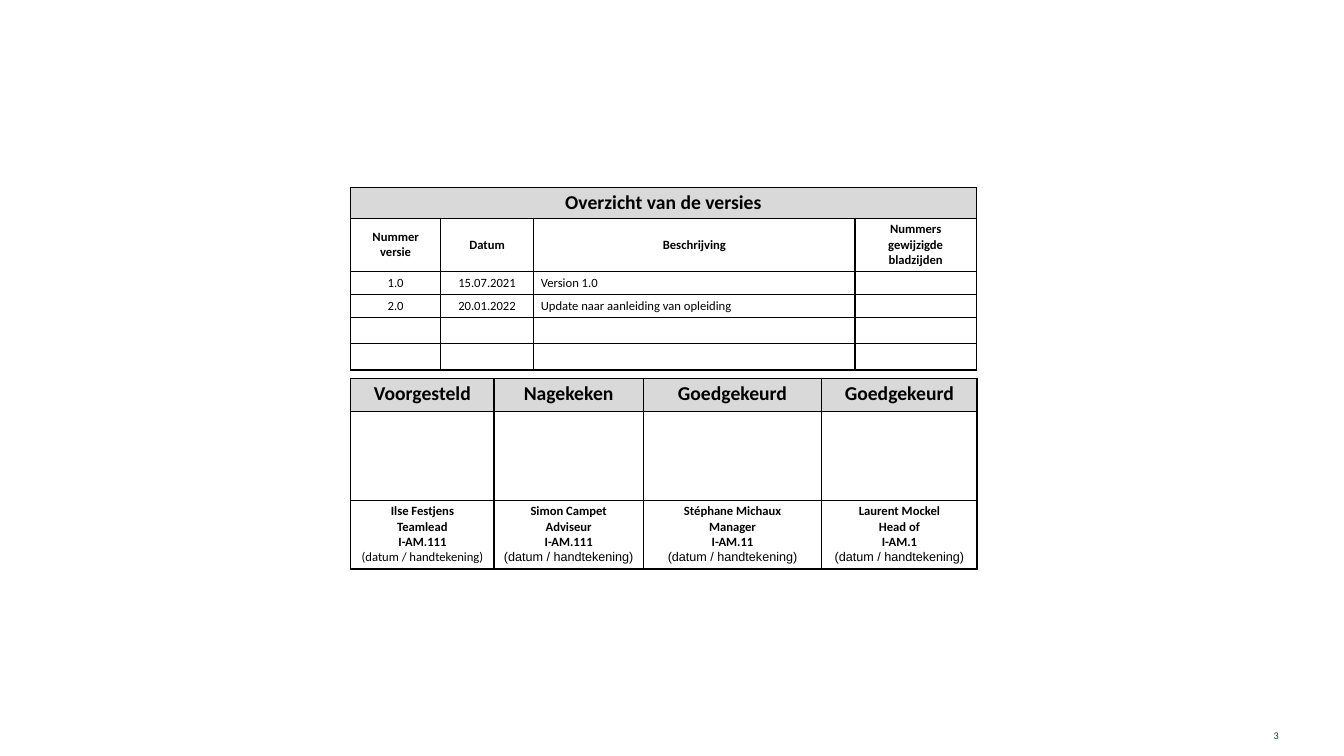
"""Build the version overview and approval slide."""
from lxml import etree
from pptx import Presentation
from pptx.dml.color import RGBColor
from pptx.enum.text import MSO_ANCHOR, PP_ALIGN
from pptx.oxml.ns import qn
from pptx.util import Cm, Pt

LEFT, CENTER = PP_ALIGN.LEFT, PP_ALIGN.CENTER
TOP, MIDDLE = MSO_ANCHOR.TOP, MSO_ANCHOR.MIDDLE
COLORS = {"text": "000000", "heading": "D9D9D9", "cell": "FFFFFF", "number": "213A53"}
SIGNATURE = "(datum / handtekening)"
TABLE_LEFT = 8.84

APPROVALS = {
    "top": 9.53,
    "columns": [3.61, 3.76, 4.5, 3.91],
    "rows": [0.84, 2.24, 1.73],
    "cells": [
        ["Voorgesteld", "Nagekeken", "Goedgekeurd", "Goedgekeurd"],
        [""] * 4,
        [
            f"Ilse Festjens\nTeamlead\nI-AM.111\n{SIGNATURE}",
            f"Simon Campet\nAdviseur\nI-AM.111\n{SIGNATURE}",
            f"Stéphane Michaux\nManager\nI-AM.11\n{SIGNATURE}",
            f"Laurent Mockel\nHead of\nI-AM.1\n{SIGNATURE}",
        ],
    ],
    "bold_rows": (0, 2),
    "middle_rows": (),
    "left_cells": (),
}
VERSIONS = {
    "top": 4.72,
    "columns": [2.26, 2.35, 8.1, 3.05],
    "rows": [0.78, 1.34, 0.58, 0.58, 0.66, 0.66],
    "cells": [
        ["Overzicht van de versies", "", "", ""],
        ["Nummer versie", "Datum", "Beschrijving", "Nummers gewijzigde bladzijden"],
        ["1.0", "15.07.2021", "Version 1.0", ""],
        ["2.0", "20.01.2022", "Update naar aanleiding van opleiding", ""],
        [""] * 4,
        [""] * 4,
    ],
    "bold_rows": (0, 1),
    "middle_rows": (1,),
    "left_cells": ((2, 2), (3, 2)),
}


def add_run(paragraph, text, size, color, bold=False, font="Calibri"):
    run = paragraph.add_run()
    run.text = text
    run.font.name = font
    run.font.size = Pt(size)
    run.font.bold = bold
    run.font.color.rgb = RGBColor.from_string(COLORS[color])


def add_borders(cell):
    properties = cell._tc.get_or_add_tcPr()
    for side in ("a:lnL", "a:lnR", "a:lnT", "a:lnB"):
        line = etree.SubElement(properties, qn(side), w=str(Pt(1)))
        fill = etree.SubElement(line, qn("a:solidFill"))
        etree.SubElement(fill, qn("a:srgbClr"), val=COLORS["text"])


def fill_cell(cell, content, row, column):
    add_borders(cell)
    cell.fill.solid()
    cell.fill.fore_color.rgb = RGBColor.from_string(COLORS["cell" if row else "heading"])
    cell.margin_left = cell.margin_right = Cm(0.18)
    cell.margin_top = cell.margin_bottom = Cm(0.09)
    cell.vertical_anchor = MIDDLE if row in content["middle_rows"] else TOP
    for index, text in enumerate(content["cells"][row][column].split("\n")):
        frame = cell.text_frame
        paragraph = frame.add_paragraph() if index else frame.paragraphs[0]
        paragraph.alignment = LEFT if (row, column) in content["left_cells"] else CENTER
        if text:
            signature = text == SIGNATURE
            add_run(paragraph, text, 9 if row else 14, "text",
                    row in content["bold_rows"] and not signature,
                    "Arial" if signature and column else "Calibri")
        else:
            paragraph._p.get_or_add_endParaRPr().set("sz", "900")


def add_content_table(slide, content):
    columns, rows = content["columns"], content["rows"]
    table = slide.shapes.add_table(
        len(rows), len(columns), Cm(TABLE_LEFT), Cm(content["top"]),
        Cm(sum(columns)), Cm(sum(rows))).table
    table.first_row = table.horz_banding = False
    for column, width in enumerate(columns):
        table.columns[column].width = Cm(width)
    for row, height in enumerate(rows):
        table.rows[row].height = Cm(height)
        for column in range(len(columns)):
            fill_cell(table.cell(row, column), content, row, column)
    return table


def main():
    presentation = Presentation()
    presentation.slide_width, presentation.slide_height = Cm(33.87), Cm(19.05)
    slide = presentation.slides.add_slide(presentation.slide_layouts[6])
    add_content_table(slide, APPROVALS)
    versions = add_content_table(slide, VERSIONS)
    versions.cell(0, 0).merge(versions.cell(0, 3))

    number = slide.shapes.add_textbox(Cm(31.85), Cm(18.03), Cm(1.57), Cm(1.02))
    number.text_frame.word_wrap = True
    number.text_frame.vertical_anchor = MIDDLE
    add_run(number.text_frame.paragraphs[0], "3", 7.3, "number")
    presentation.save("out.pptx")


if __name__ == "__main__":
    main()
